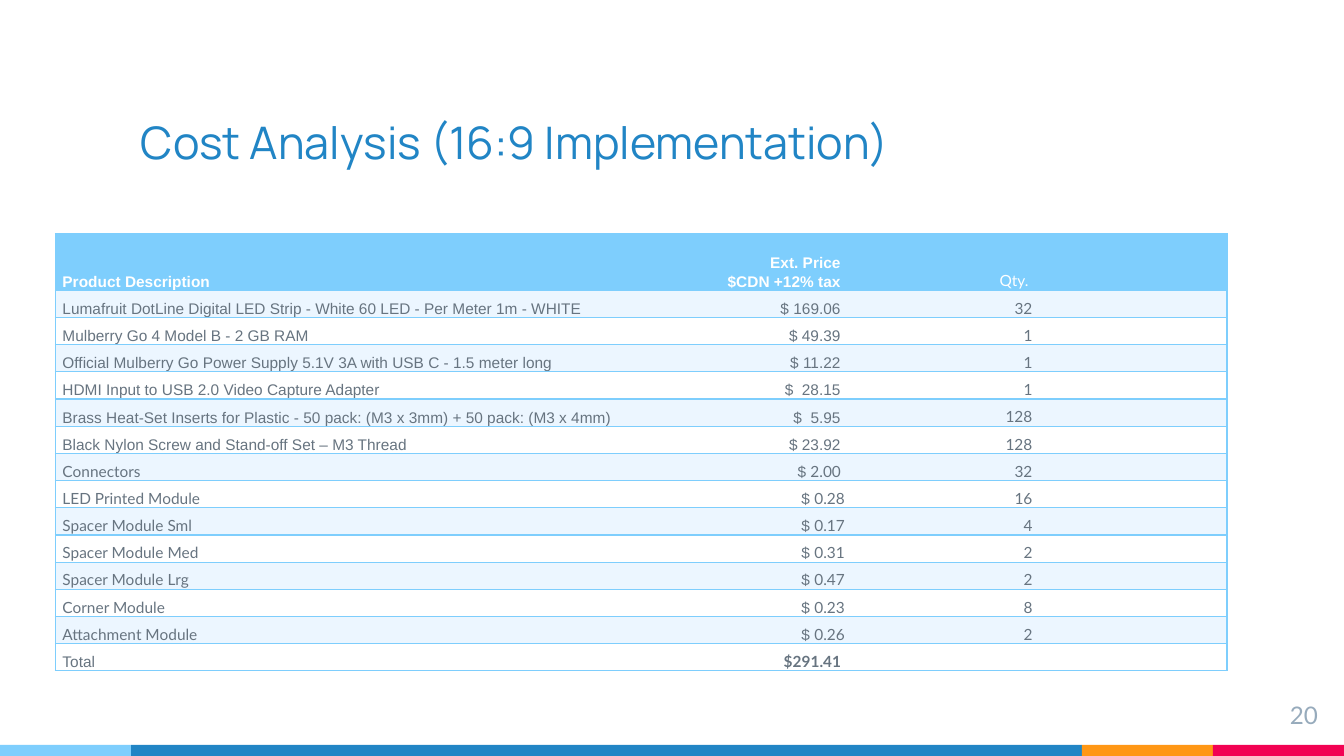
import pptx
import pptx.dml.color
import pptx.enum.shapes
import pptx.enum.text
import pptx.oxml.ns
import pptx.util
import lxml.etree

Inches = pptx.util.Inches
ALIGN = pptx.enum.text.PP_ALIGN
ANCHOR = pptx.enum.text.MSO_ANCHOR
SKY, BLUE, GREY = "7ECEFD", "2185C5", "677480"


def color(hex_code):
    return pptx.dml.color.RGBColor.from_string(hex_code)


def write(frame, runs, size, ink, bold=False, align=ALIGN.LEFT, spacing=None, after=None):
    paragraph = frame.paragraphs[0]
    paragraph.alignment = align
    paragraph.line_spacing = spacing
    paragraph.space_after = after
    for font_name, text in runs:
        for number, line in enumerate(text.split("\n")):
            if number:
                paragraph.add_line_break()
            run = paragraph.add_run()
            run.text = line
            run.font.name = font_name
            run.font.size = pptx.util.Pt(size)
            run.font.bold = bold
            run.font.color.rgb = color(ink)


deck = pptx.Presentation()
deck.slide_width, deck.slide_height = Inches(13.33), Inches(7.5)
slide = deck.slides.add_slide(deck.slide_layouts[6])

stripe_left = 0
for width, fill in [(1.3, SKY), (9.43, BLUE), (1.3, "FF9715"), (1.3, "F20253")]:
    stripe = slide.shapes.add_shape(pptx.enum.shapes.MSO_SHAPE.RECTANGLE,
                                    Inches(stripe_left), Inches(7.39), Inches(width), Inches(0.11))
    stripe.shadow.inherit = False
    stripe.fill.solid()
    stripe.fill.fore_color.rgb = color(fill)
    stripe.line.fill.background()
    stripe_left += width

for box, anchor, font_name, text, size, ink, align in [
    ((1.3, 0.52, 9.42, 1.25), ANCHOR.BOTTOM, "Manrope",
     "Cost Analysis (16:9 Implementation)", 32, BLUE, ALIGN.LEFT),
    ((12.37, 6.85, 0.8, 0.46), ANCHOR.TOP, "Lato", "20", 17.3, "97ABBC", ALIGN.RIGHT),
]:
    frame = slide.shapes.add_textbox(*map(Inches, box)).text_frame
    frame.word_wrap = True
    frame.vertical_anchor = anchor
    frame.margin_left = frame.margin_right = frame.margin_top = frame.margin_bottom = Inches(0.1)
    write(frame, [(font_name, text)], size, ink, align=align)

purchased = [
    ("Lumafruit DotLine Digital LED Strip - White 60 LED - Per Meter 1m - WHITE", "$ 169.06 ", "32"),
    ("Mulberry Go 4 Model B - 2 GB RAM", "$ 49.39 ", "1"),
    ("Official Mulberry Go Power Supply 5.1V 3A with USB C - 1.5 meter long", "$ 11.22 ", "1"),
    ("HDMI Input to USB 2.0 Video Capture Adapter", "$  28.15 ", "1"),
    ("Brass Heat-Set Inserts for Plastic - 50 pack: (M3 x 3mm) + 50 pack: (M3 x 4mm)", "$  5.95 ", "128"),
    ("Black Nylon Screw and Stand-off Set – M3 Thread", "$ 23.92 ", "128"),
]
made = [
    ("Connectors", "2.00 ", "32"),
    ("LED Printed Module", "0.28", "16"),
    ("Spacer Module Sml", "0.17", "4"),
    ("Spacer Module Med", "0.31", "2"),
    ("Spacer Module Lrg", "0.47", "2"),
    ("Corner Module", "0.23", "8"),
    ("Attachment Module", "0.26", "2"),
]
rows = [[[("Arial", "Product Description")],
         [("Arial", "Ext. Price \n$CDN +12% tax ")], [("Lato", "Qty. ")], []]]
rows += [[[("Arial", item)], [("Arial", price)], [("Lato", quantity)], []]
         for item, price, quantity in purchased]
rows += [[[("Lato", item)], [("Arial", "$ "), ("Lato", price)], [("Lato", quantity)], []]
         for item, price, quantity in made]
rows.append([[("Arial", "Total")], [("Lato", "$291.41 ")], [], []])

costs = slide.shapes.add_table(len(rows), 4, Inches(0.55), Inches(2.32),
                               Inches(11.62), Inches(4.34)).table
costs.first_row = costs.horz_banding = False
for column, width in zip(costs.columns, [6.04, 1.86, 1.86, 1.86]):
    column.width = Inches(width)

for r, row in enumerate(rows):
    costs.rows[r].height = Inches(0.27 if r else 0.56)
    for c, runs in enumerate(row):
        cell = costs.cell(r, c)
        cell.vertical_anchor = ANCHOR.BOTTOM
        cell.margin_left = cell.margin_right = Inches(0.07)
        cell.margin_top = cell.margin_bottom = 0
        cell.fill.solid()
        cell.fill.fore_color.rgb = color(SKY if r == 0 else "ECF6FF" if r % 2 else "FFFFFF")
        bold = r == 0 and c < 2 or r == len(rows) - 1 and c == 1
        write(cell.text_frame, runs, 11, GREY if r else "FFFFFF", bold,
              ALIGN.RIGHT if c else ALIGN.LEFT, 1.07, pptx.util.Pt(8))
        if not runs:
            lxml.etree.SubElement(cell.text_frame.paragraphs[0]._p,
                                  pptx.oxml.ns.qn("a:endParaRPr"), sz="1100")
        properties = cell._tc.get_or_add_tcPr()
        edges = [("a:lnL", c == 0), ("a:lnR", c == 3), ("a:lnT", True), ("a:lnB", True)]
        for position, (edge, visible) in enumerate(edges):
            border = lxml.etree.Element(pptx.oxml.ns.qn(edge), w="12700")
            if visible:
                paint = lxml.etree.SubElement(border, pptx.oxml.ns.qn("a:solidFill"))
                lxml.etree.SubElement(paint, pptx.oxml.ns.qn("a:srgbClr"), val=SKY)
            else:
                lxml.etree.SubElement(border, pptx.oxml.ns.qn("a:noFill"))
            properties.insert(position, border)

deck.save("out.pptx")
